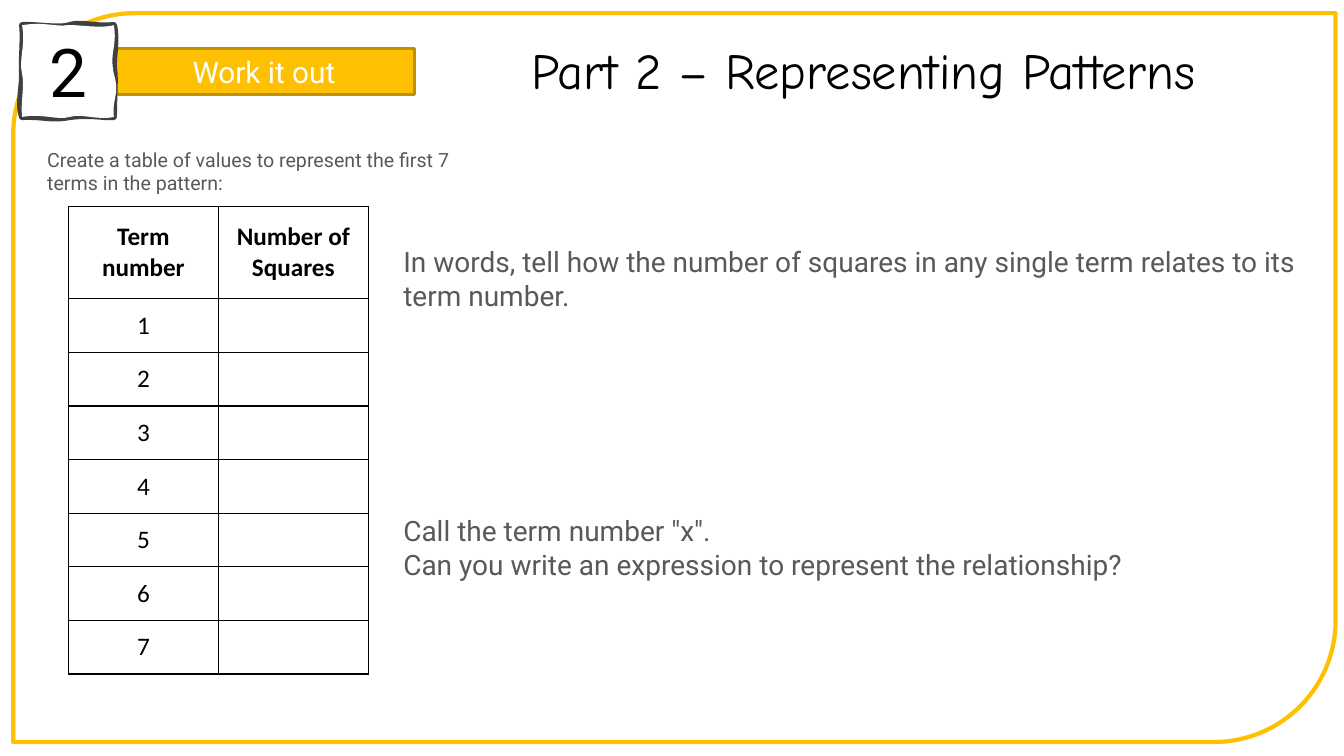
import pptx
import pptx.dml.color
import pptx.enum.shapes
import pptx.enum.text
import pptx.oxml
import pptx.oxml.ns
import pptx.util

Pt = pptx.util.Pt
ALIGN = pptx.enum.text.PP_ALIGN
ANCHOR = pptx.enum.text.MSO_ANCHOR
SHAPE = pptx.enum.shapes.MSO_SHAPE
NAMESPACE = pptx.oxml.ns.nsdecls("a")

GOLD, DARK_GOLD, GREY = "FFC001", "BF9000", "595959"
BLACK, WHITE, CHARCOAL = "000000", "FFFFFF", "404040"

# Hand-drawn square, in hundredths of its side: start, then curves of three points
SKETCH_OUTLINE = [
    (0, 0), (15, -1), (41, 4), (52, 0), (64, -4), (78, 2), (100, 0),
    (104, 16), (99, 37), (100, 47), (102, 57), (100, 77), (100, 100),
    (89, 101), (75, 97), (52, 100), (30, 104), (25, 99), (0, 100),
    (-5, 87), (1, 63), (0, 52), (-1, 41), (2, 11), (0, 0)]
SKETCH_FILL = [
    (0, 0), (23, -4), (38, 2), (49, 0), (60, -1), (85, 4), (100, 0),
    (104, 23), (95, 29), (100, 53), (107, 76), (98, 78), (100, 100),
    (82, 104), (66, 96), (52, 100), (38, 104), (23, 96), (0, 100),
    (-2, 84), (3, 68), (0, 53), (-4, 37), (4, 24), (0, 0)]


def color(hex_code):
    return pptx.dml.color.RGBColor.from_string(hex_code)


def paint(shape, fill=None, line=None, weight=0):
    shape.shadow.inherit = False
    if fill:
        shape.fill.solid()
        shape.fill.fore_color.rgb = color(fill)
    else:
        shape.fill.background()
    if line:
        shape.line.color.rgb = color(line)
        shape.line.width = Pt(weight)
    else:
        shape.line.fill.background()


def write(frame, text, size, font, hex_code, align=ALIGN.LEFT, bold=False):
    frame.word_wrap = True
    frame.text = text
    for paragraph in frame.paragraphs:
        paragraph.alignment = align
        paragraph.font.size = Pt(size)
        paragraph.font.name = font
        paragraph.font.bold = bold
        paragraph.font.color.rgb = color(hex_code)


def add_text(slide, box, *style, anchor=ANCHOR.TOP, **options):
    frame = slide.shapes.add_textbox(*map(Pt, box)).text_frame
    write(frame, *style, **options)
    frame.vertical_anchor = anchor
    return frame


def curved_outline(points, mode):
    """Drawing XML of one closed outline made of cubic curves."""
    marks = [f'<a:pt x="{x * 1000}" y="{y * 1000}"/>' for x, y in points]
    curves = "".join(f'<a:cubicBezTo>{"".join(marks[i:i + 3])}</a:cubicBezTo>'
                     for i in range(1, len(marks), 3))
    return (f'<a:path w="100000" h="100000" {mode}><a:moveTo>{marks[0]}</a:moveTo>'
            f'{curves}<a:close/></a:path>')


def add_sketch(slide, left, top, side):
    """Square whose wavy outline and filled area are two sets of curves."""
    builder = slide.shapes.build_freeform(Pt(left), Pt(top))
    right, bottom = left + side, top + side
    builder.add_line_segments(
        [(Pt(x), Pt(y)) for x, y in ((right, top), (right, bottom), (left, bottom))])
    sketch = builder.convert_to_shape()
    straight = next(sketch._element.iter(pptx.oxml.ns.qn("a:pathLst")))
    curved = pptx.oxml.parse_xml(
        f'<a:pathLst {NAMESPACE}>'
        + curved_outline(SKETCH_OUTLINE, 'fill="none"')
        + curved_outline(SKETCH_FILL, 'stroke="0"') + '</a:pathLst>')
    straight.getparent().replace(straight, curved)
    return sketch


def add_border(slide, box):
    border = slide.shapes.add_shape(SHAPE.ROUND_2_DIAG_RECTANGLE, *map(Pt, box))
    paint(border, line=GOLD, weight=3)


def add_header(slide, box):
    left, top, width = box
    # Section label
    label = slide.shapes.add_shape(
        SHAPE.RECTANGLE, Pt(left + 65.5), Pt(top + 16.5), Pt(214.5), Pt(33.2))
    paint(label, GOLD, DARK_GOLD, 2.25)
    write(label.text_frame, "Work it out", 21.3, "Roboto", WHITE, ALIGN.CENTER)
    # Number badge
    badge = add_sketch(slide, left, top, 65.5)
    paint(badge, WHITE, CHARCOAL, 4.5)
    write(badge.text_frame, "2", 48, "Roboto", BLACK, ALIGN.CENTER)
    badge.text_frame.vertical_anchor = ANCHOR.MIDDLE
    # Title
    add_text(slide, (left + 283.3, top + 5.8, width - 283.7, 51),
             "Part 2 – Representing Patterns", 36, "Comic Neue", BLACK,
             align=ALIGN.CENTER, anchor=ANCHOR.MIDDLE)


def add_cell_borders(cell):
    properties = cell._tc.get_or_add_tcPr()
    for position, side in enumerate(("lnL", "lnR", "lnT", "lnB")):
        properties.insert(position, pptx.oxml.parse_xml(
            f'<a:{side} {NAMESPACE} w="12700"><a:solidFill>'
            f'<a:srgbClr val="{BLACK}"/></a:solidFill></a:{side}>'))


def add_values_table(slide, box):
    left, top, width, height = box
    # Table of terms
    rows = [("Term number", "Number of Squares")] + [(str(n), "") for n in range(1, 8)]
    table = slide.shapes.add_table(len(rows), 2, *map(Pt, box)).table
    header_height = 66
    for column in table.columns:
        column.width = Pt(width / 2)
    for r, row in enumerate(rows):
        table.rows[r].height = Pt(
            (height - header_height) / (len(rows) - 1) if r else header_height)
        for c, text in enumerate(row):
            cell = table.cell(r, c)
            cell.fill.background()
            cell.vertical_anchor = ANCHOR.MIDDLE
            write(cell.text_frame, text, 18, "Calibri", BLACK, ALIGN.CENTER, r == 0)
            add_cell_borders(cell)
    # Instruction
    add_text(slide, (left - 22.3, top - 45.4, 303, 41),
             "Create a table of values to represent the first 7 terms in the pattern:",
             14, "Roboto", GREY)


def add_questions(slide, box):
    frame = add_text(
        slide, box,
        "In words, tell how the number of squares in any single term relates to its "
        "term number.\n"
        'Call the term number "x".\n'
        "Can you write an expression to represent the relationship?",
        20, "Roboto", GREY)
    frame.paragraphs[1].space_before = Pt(144)


def main():
    deck = pptx.Presentation()
    deck.slide_width, deck.slide_height = Pt(960), Pt(540)
    slide = deck.slides.add_slide(deck.slide_layouts[6])
    add_border(slide, (9.4, 9.4, 944.6, 520.6))
    add_header(slide, (15.8, 18, 919.5))
    add_questions(slide, (281, 171.4, 671.8, 249.8))
    add_values_table(slide, (48.9, 147.4, 214.2, 334.2))
    deck.save("out.pptx")


if __name__ == "__main__":
    main()
